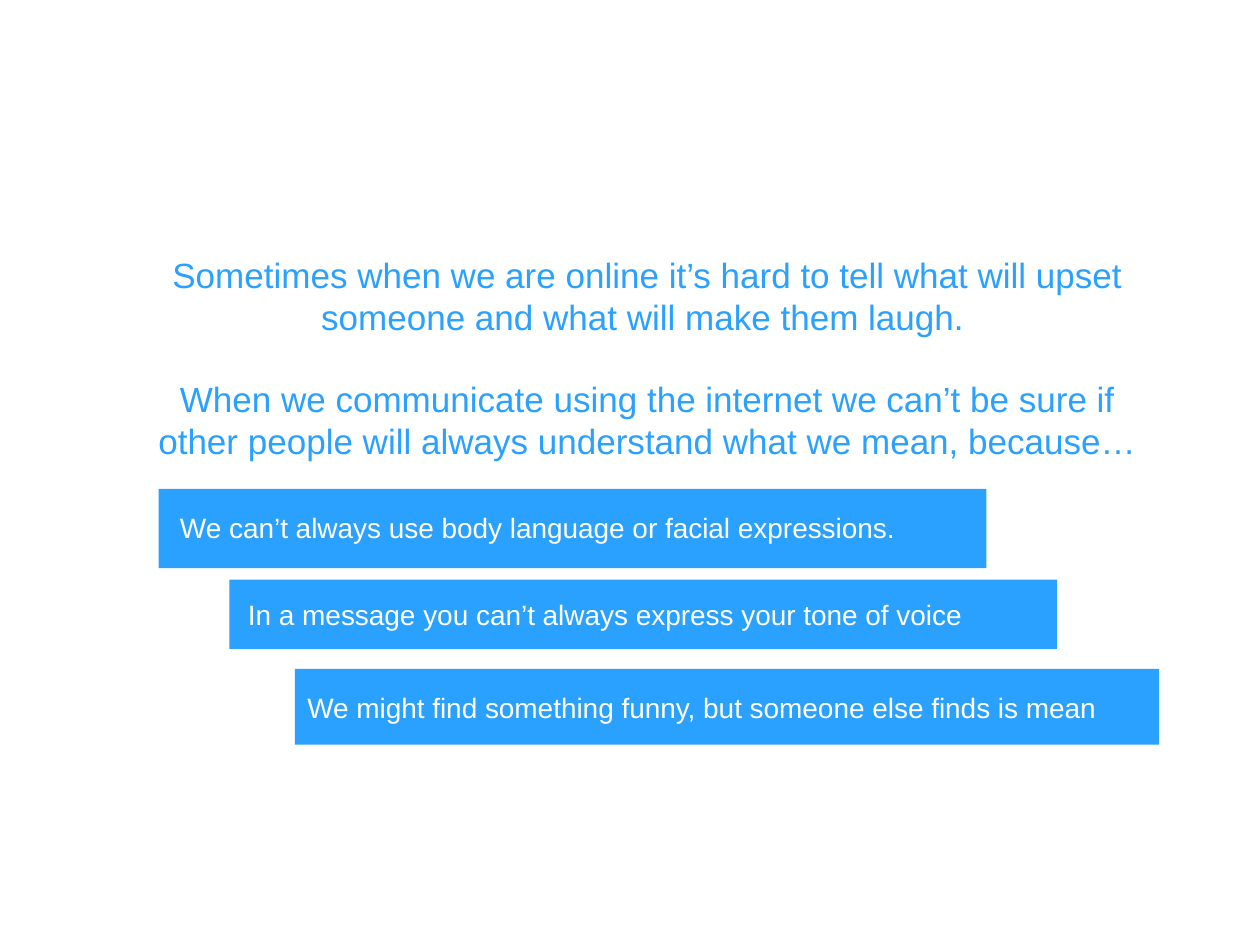
from pptx import Presentation
from pptx.dml.color import RGBColor
from pptx.enum import shapes, text
from pptx.util import Inches, Pt

BLUE = RGBColor(0x2B, 0xA1, 0xFF)
WHITE = RGBColor(0xFF, 0xFF, 0xFF)

INTRO = [
    "Sometimes when we are online it’s hard to tell what will upset someone and what will make them laugh. ",
    "When we communicate using the internet we can’t be sure if other people will always understand what we mean, because…",
]
REASONS = [
    ("We can’t always use body language or facial expressions.",
     (1.26, 3.88, 6.57, 0.63), (1.33, 4, 6.79, 0.37)),
    ("In a message you can’t always express your tone of voice",
     (1.82, 4.6, 6.57, 0.55), (1.87, 4.69, 6.17, 0.37)),
    ("We might find something funny, but someone else finds is mean",
     (2.34, 5.31, 6.86, 0.6), (2.34, 5.43, 6.59, 0.37)),
]


def add_words(parent, box, paragraphs, size, color, **layout):
    words = parent.add_textbox(*map(Inches, box)).text_frame
    words.word_wrap = True
    words.text = "\n".join(paragraphs)
    for paragraph in words.paragraphs:
        for key, value in layout.items():
            setattr(paragraph, key, value)
        for key, value in {"name": "Arial", "size": Pt(size)}.items():
            setattr(paragraph.runs[0].font, key, value)
        paragraph.runs[0].font.color.rgb = color
    return words


def add_intro(slide, box):
    intro = add_words(slide.shapes, box, INTRO, 20, BLUE, alignment=text.PP_ALIGN.CENTER)
    intro.paragraphs[1].space_before = Pt(23)


def add_reason(slide, reason, bar_box, words_box):
    group = slide.shapes.add_group_shape()
    bar = group.shapes.add_shape(shapes.MSO_SHAPE.RECTANGLE, *map(Inches, bar_box))
    bar.shadow.inherit = False
    bar.fill.solid()
    bar.fill.fore_color.rgb = BLUE
    bar.line.fill.background()
    add_words(group.shapes, words_box, [reason], 16, WHITE)


def main():
    deck = Presentation()
    deck.slide_width, deck.slide_height = Inches(10), Inches(7.5)
    slide = deck.slides.add_slide(deck.slide_layouts[6])
    add_intro(slide, (0.98, 1.96, 8.32, 1.78))
    for reason in REASONS:
        add_reason(slide, *reason)
    deck.save("out.pptx")


if __name__ == "__main__":
    main()
